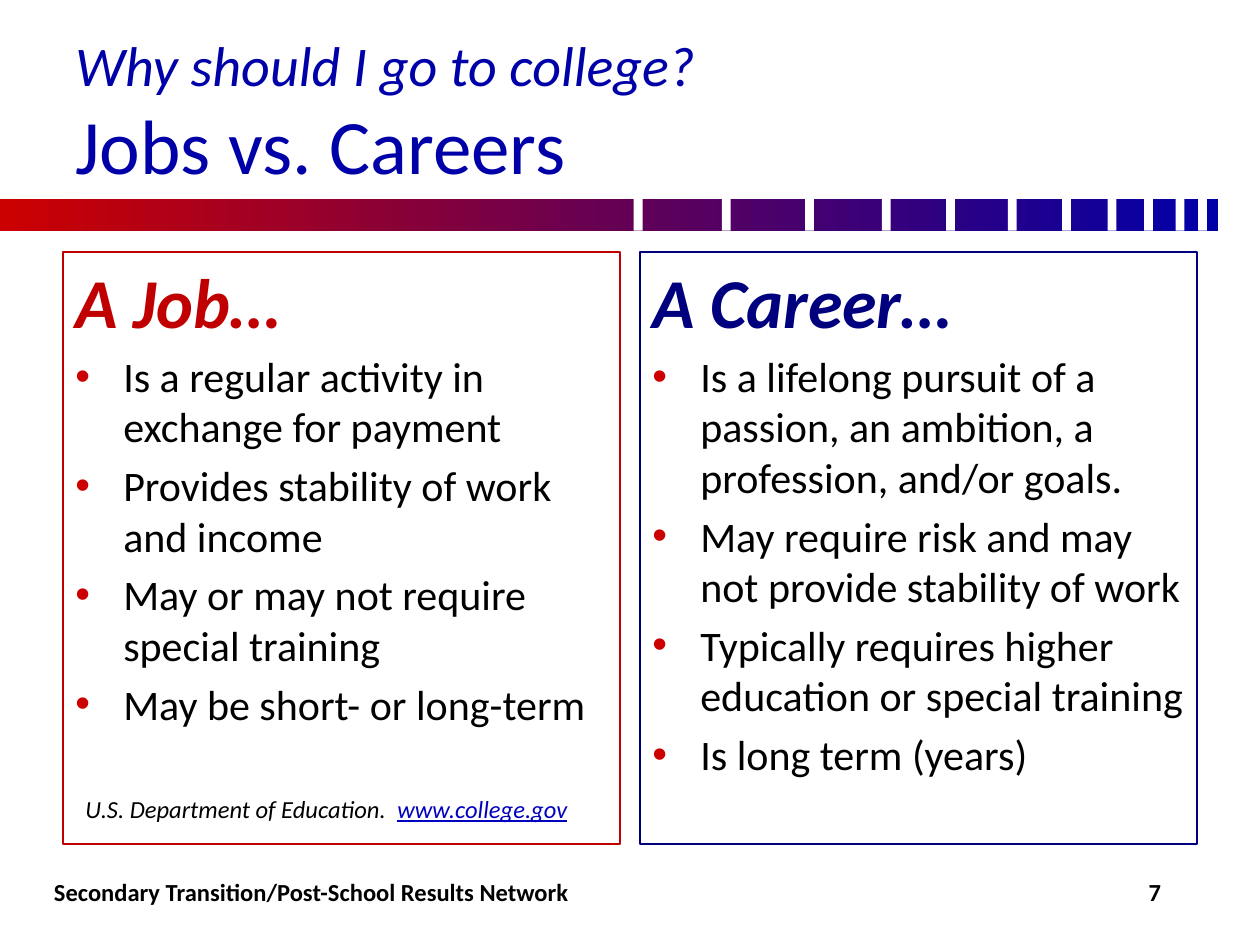
from lxml import etree
from pptx import Presentation
from pptx import util as u
from pptx.dml.color import RGBColor
from pptx.enum import shapes, text
from pptx.oxml.ns import qn

COLORS = {
    "red": "CC0000",
    "blue": "0000A8",
    "job": "C00000",
    "career": "00007E",
    "link": "0000BF",
    "black": "000000",
    "white": "FFFFFF",
}
FONT = "Calibri"
BAR_TOP, BAR_WIDTH, BAR_HEIGHT = 1.58, 9.67, 0.25
GAP_WIDTH = 0.07
GAP_LEFTS = [5.03, 5.73, 6.39, 7, 7.51, 8, 8.43, 8.79, 9.08, 9.33, 9.51]
INDENT = 0.38
PANELS = [
    (0.5, "job", "A Job…", [
        "Is a regular activity in exchange for payment",
        "Provides stability of work and income",
        "May or may not require special training",
        "May be short- or long-term",
    ]),
    (5.08, "career", "A Career…", [
        "Is a lifelong pursuit of a passion, an ambition, a profession, and/or goals.",
        "May require risk and may not provide stability of work",
        "Typically requires higher education or special training",
        "Is long term (years)",
    ]),
]


def rgb(name):
    return RGBColor.from_string(COLORS[name])


def format_run(run, size, color="black", bold=False, italic=False, underline=False):
    font = run.font
    font.name = FONT
    font.size = u.Pt(size)
    font.color.rgb = rgb(color)
    font.bold, font.italic, font.underline = bold, italic, underline


def add_rectangle(slide, left, top, width, height):
    shape = slide.shapes.add_shape(
        shapes.MSO_SHAPE.RECTANGLE,
        u.Inches(left), u.Inches(top), u.Inches(width), u.Inches(height))
    shape.shadow.inherit = False
    return shape


def add_bar(slide):
    bar = add_rectangle(slide, 0, BAR_TOP, BAR_WIDTH, BAR_HEIGHT)
    bar.line.fill.background()
    bar.fill.gradient()
    bar.fill.gradient_angle = 0
    for stop, position, color in zip(bar.fill.gradient_stops, (0, 1), ("red", "blue")):
        stop.position = position
        stop.color.rgb = rgb(color)
    for left in GAP_LEFTS:
        gap = add_rectangle(slide, left, BAR_TOP, GAP_WIDTH, BAR_HEIGHT)
        gap.fill.solid()
        gap.fill.fore_color.rgb = rgb("white")
        gap.line.fill.background()


def add_text(slide, left, top, width, height, runs, wrap=True,
             anchor=text.MSO_ANCHOR.MIDDLE, align=text.PP_ALIGN.LEFT):
    box = slide.shapes.add_textbox(
        u.Inches(left), u.Inches(top), u.Inches(width), u.Inches(height))
    frame = box.text_frame
    frame.word_wrap = wrap
    frame.vertical_anchor = anchor
    paragraph = frame.paragraphs[0]
    paragraph.alignment = align
    for content, style in runs:
        run = paragraph.add_run()
        run.text = content
        format_run(run, **style)
    return paragraph


def add_title(slide):
    paragraph = add_text(slide, 0.5, 0.25, 9, 1.25, [
        ("Why should I go to college?", dict(size=32, color="blue", italic=True))])
    paragraph.add_line_break()
    run = paragraph.add_run()
    run.text = "Jobs vs. Careers"
    format_run(run, 44, "blue")


def add_bullet(paragraph):
    properties = paragraph._p.get_or_add_pPr()
    color = etree.SubElement(properties, qn("a:buClr"))
    etree.SubElement(color, qn("a:srgbClr"), val=COLORS["red"])
    etree.SubElement(properties, qn("a:buFont"), typeface="Arial")
    etree.SubElement(properties, qn("a:buChar"), char="•")


def add_panel(slide, left, color, heading, items):
    panel = add_rectangle(slide, left, 2, 4.42, 4.7)
    panel.fill.background()
    panel.line.color.rgb = rgb(color)
    panel.line.width = u.Pt(1.5)
    frame = panel.text_frame
    frame.word_wrap = True
    frame.vertical_anchor = text.MSO_ANCHOR.TOP
    frame.text = "\n".join([heading, *items])
    for index, paragraph in enumerate(frame.paragraphs):
        paragraph.alignment = text.PP_ALIGN.LEFT
        properties = paragraph._p.get_or_add_pPr()
        properties.set("marL", str(u.Inches(INDENT)))
        properties.set("indent", str(-u.Inches(INDENT)))
        if index == 0:
            format_run(paragraph.runs[0], 40, color, bold=True, italic=True)
        else:
            paragraph.space_before = u.Pt(4.8)
            add_bullet(paragraph)
            format_run(paragraph.runs[0], 24)


def add_source(slide):
    add_text(slide, 0.58, 6.25, 4.17, 0.34, [
        ("U.S. Department of Education.  ", dict(size=14, italic=True)),
        ("www.college.gov", dict(size=14, color="link", italic=True, underline=True)),
    ], anchor=text.MSO_ANCHOR.TOP)


def add_footer(slide):
    style = dict(size=14, bold=True)
    add_text(slide, 8.75, 6.83, 0.83, 0.5, [("7", style)],
             wrap=False, align=text.PP_ALIGN.CENTER)
    add_text(slide, 0.33, 6.83, 4.58, 0.5,
             [("Secondary Transition/Post-School Results Network", style)], wrap=False)


def main():
    presentation = Presentation()
    presentation.slide_width = u.Inches(10)
    presentation.slide_height = u.Inches(7.5)
    slide = presentation.slides.add_slide(presentation.slide_layouts[6])
    add_bar(slide)
    add_title(slide)
    for panel in PANELS:
        add_panel(slide, *panel)
    add_source(slide)
    add_footer(slide)
    presentation.save("out.pptx")


if __name__ == "__main__":
    main()
